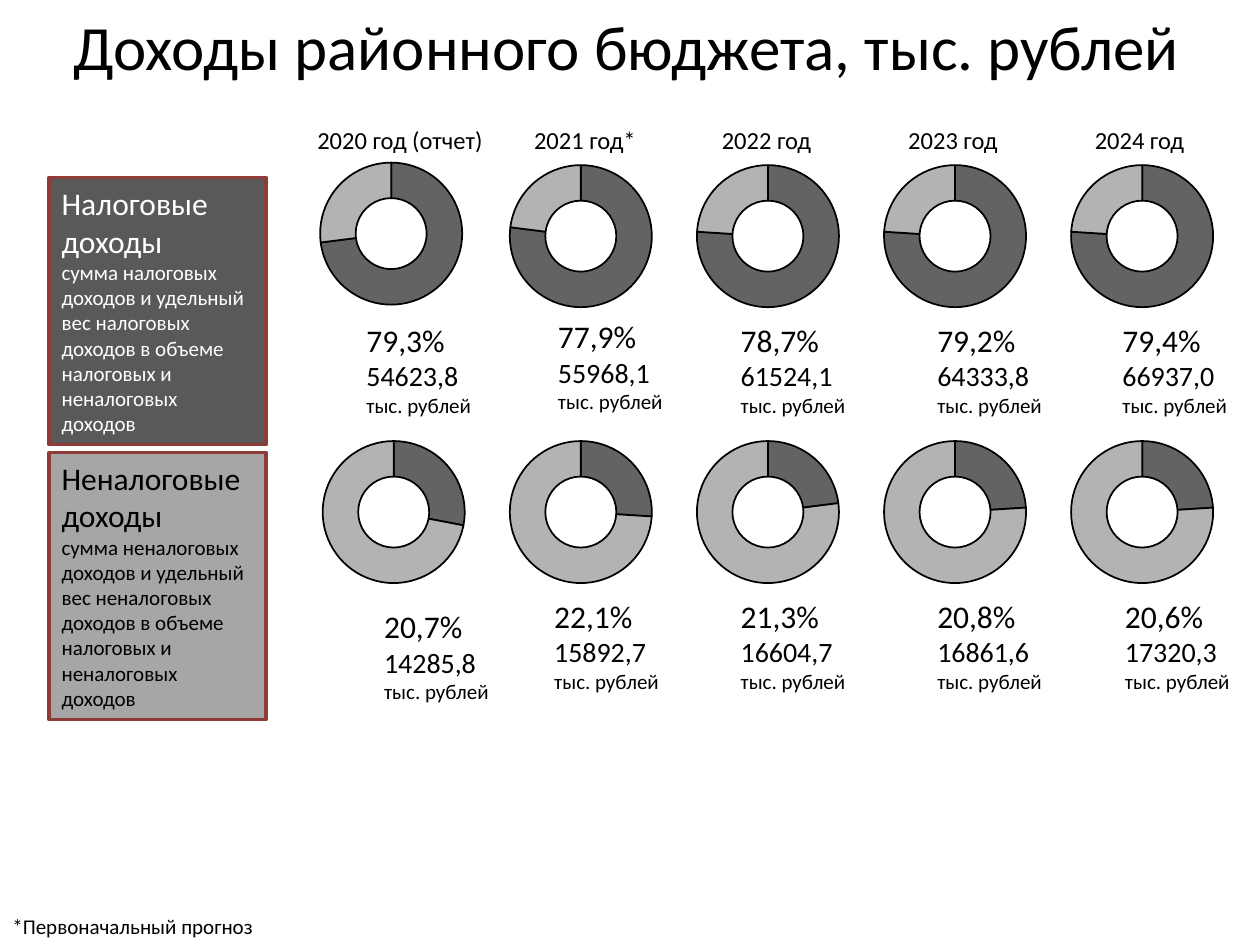
from dataclasses import dataclass

from pptx import Presentation
from pptx.chart.data import CategoryChartData
from pptx.dml.color import RGBColor
from pptx.enum.chart import XL_CHART_TYPE
from pptx.enum.shapes import MSO_SHAPE
from pptx.enum.text import MSO_ANCHOR, MSO_AUTO_SIZE, PP_ALIGN
from pptx.oxml import parse_xml
from pptx.oxml.ns import nsdecls
from pptx.slide import Slide
from pptx.text.text import TextFrame
from pptx.util import Inches, Pt


@dataclass(frozen=True)
class Theme:
    font: str = "Calibri"
    black: RGBColor = RGBColor(0, 0, 0)
    white: RGBColor = RGBColor(255, 255, 255)
    tax_fill: RGBColor = RGBColor(0x59, 0x59, 0x59)
    other_fill: RGBColor = RGBColor(0xA6, 0xA6, 0xA6)
    border: RGBColor = RGBColor(0x8E, 0x3B, 0x39)
    ring: tuple[RGBColor, ...] = (RGBColor(0x63, 0x63, 0x63), RGBColor(0xB3, 0xB3, 0xB3))
    title: int = 36
    heading: int = 18
    amount: int = 16
    year: int = 14
    small: int = 12


@dataclass(frozen=True)
class Year:
    label: str
    left: float
    width: float


@dataclass(frozen=True)
class Share:
    percent: str
    amount: str
    first_slice: int
    text_left: float
    text_top: float
    chart_shift: float = 0


@dataclass(frozen=True)
class IncomeRow:
    heading: str
    description: str
    fill: RGBColor
    color: RGBColor
    box_top: float
    chart_top: float
    shares: tuple[Share, ...]


THEME = Theme()
CHART_SIZE = 1.41
CHART_LEFT = 2.42
COLUMN_STEP = 1.485

YEARS = (
    Year("2020 год (отчет)", 2.42, 1.53),
    Year("2021 год*", 4.14, 1.02),
    Year("2022 год", 5.63, 0.92),
    Year("2023 год", 7.11, 0.92),
    Year("2024 год", 8.59, 0.92),
)

ROWS = (
    IncomeRow(
        "Налоговые доходы",
        "сумма налоговых доходов и удельный вес налоговых доходов "
        "в объеме налоговых и неналоговых доходов",
        THEME.tax_fill, THEME.white, 1.41, 1.17,
        (
            Share("79,3%", "54623,8", 73, 2.81, 2.5, -0.02),
            Share("77,9%", "55968,1", 77, 4.33, 2.47),
            Share("78,7%", "61524,1", 76, 5.78, 2.5),
            Share("79,2%", "64333,8", 76, 7.34, 2.5),
            Share("79,4%", "66937,0", 76, 8.81, 2.5),
        ),
    ),
    IncomeRow(
        "Неналоговые доходы",
        "сумма неналоговых доходов и удельный вес неналоговых доходов "
        "в объеме налоговых и неналоговых доходов",
        THEME.other_fill, THEME.black, 3.59, 3.36,
        (
            Share("20,7%", "14285,8", 28, 2.95, 4.77),
            Share("22,1%", "15892,7", 26, 4.3, 4.69),
            Share("21,3%", "16604,7", 23, 5.78, 4.69),
            Share("20,8%", "16861,6", 24, 7.34, 4.69),
            Share("20,6%", "17320,3", 24, 8.83, 4.69),
        ),
    ),
)


def write_lines(
    text_frame: TextFrame,
    lines: list[tuple[str, int]],
    color: RGBColor = THEME.black,
    alignment: PP_ALIGN = PP_ALIGN.LEFT,
) -> None:
    text_frame.text = "\n".join(text for text, _ in lines)
    for paragraph, (_, size) in zip(text_frame.paragraphs, lines):
        paragraph.alignment = alignment
        font = paragraph.runs[0].font
        font.name = THEME.font
        font.size = Pt(size)
        font.color.rgb = color


def add_text(
    slide: Slide, left: float, top: float, width: float, height: float,
    lines: list[tuple[str, int]], wrap: bool = False,
) -> None:
    text_box = slide.shapes.add_textbox(Inches(left), Inches(top), Inches(width), Inches(height))
    text_box.text_frame.word_wrap = wrap
    text_box.text_frame.auto_size = MSO_AUTO_SIZE.SHAPE_TO_FIT_TEXT
    write_lines(text_box.text_frame, lines)


def add_doughnut(slide: Slide, left: float, top: float, first_slice: int) -> None:
    data = CategoryChartData()
    data.categories = ["1", "2"]
    data.add_series("Series 1", (first_slice, 100 - first_slice))
    chart = slide.shapes.add_chart(
        XL_CHART_TYPE.DOUGHNUT, Inches(left), Inches(top), Inches(CHART_SIZE), Inches(CHART_SIZE), data
    ).chart
    chart.has_legend = False
    chart.has_title = False
    chart.font.name = THEME.font
    chart.font.size = Pt(THEME.heading)
    chart.font.color.rgb = THEME.black
    plot = chart.plots[0]
    plot.vary_by_categories = True
    for index, color in enumerate(THEME.ring):
        point_format = plot.series[0].points[index].format
        point_format.fill.solid()
        point_format.fill.fore_color.rgb = color
        point_format.line.color.rgb = THEME.black
        point_format.line.width = Pt(1)
    plot_area = chart.element.chart.plotArea
    for layout in plot_area.findall("{*}layout"):
        plot_area.remove(layout)
    plot_area.insert(0, parse_xml(
        f'<c:layout {nsdecls("c")}><c:manualLayout><c:layoutTarget val="inner"/>'
        '<c:xMode val="edge"/><c:yMode val="edge"/><c:x val="0.1"/><c:y val="0.1"/>'
        '<c:w val="0.8"/><c:h val="0.8"/></c:manualLayout></c:layout>'
    ))
    for hole_size in chart.element.iterfind(".//{*}holeSize"):
        hole_size.set("val", "50")


def add_income_row(slide: Slide, row: IncomeRow) -> None:
    for column, share in enumerate(row.shares):
        left = CHART_LEFT + column * COLUMN_STEP + share.chart_shift
        add_doughnut(slide, left, row.chart_top + share.chart_shift, share.first_slice)
    box = slide.shapes.add_shape(
        MSO_SHAPE.RECTANGLE, Inches(0.39), Inches(row.box_top), Inches(1.72), Inches(2.12)
    )
    box.shadow.inherit = False
    box.fill.solid()
    box.fill.fore_color.rgb = row.fill
    box.line.color.rgb = THEME.border
    box.line.width = Pt(2)
    box.text_frame.word_wrap = True
    box.text_frame.auto_size = MSO_AUTO_SIZE.SHAPE_TO_FIT_TEXT
    box.text_frame.vertical_anchor = MSO_ANCHOR.TOP
    write_lines(
        box.text_frame, [(row.heading, THEME.heading), (row.description, THEME.small)], row.color
    )
    for share in row.shares:
        add_text(slide, share.text_left, share.text_top, 1.05, 0.88, [
            (share.percent, THEME.heading),
            (share.amount, THEME.amount),
            ("тыс. рублей", THEME.small),
        ])


def main() -> None:
    presentation = Presentation()
    presentation.slide_width = Inches(10)
    presentation.slide_height = Inches(7.5)
    slide = presentation.slides.add_slide(presentation.slide_layouts[5])
    title = slide.shapes.title
    title.left, title.top, title.width, title.height = (
        Inches(0.47), Inches(0), Inches(9), Inches(0.72)
    )
    title.text_frame.vertical_anchor = MSO_ANCHOR.MIDDLE
    write_lines(
        title.text_frame, [("Доходы районного бюджета, тыс. рублей", THEME.title)],
        alignment=PP_ALIGN.CENTER,
    )
    for row in ROWS:
        add_income_row(slide, row)
    for year in YEARS:
        add_text(slide, year.left, 0.94, year.width, 0.34, [(year.label, THEME.year)])
    add_text(slide, 0, 7.2, 2.73, 0.3, [("*Первоначальный прогноз", THEME.small)], wrap=True)
    presentation.save("out.pptx")


if __name__ == "__main__":
    main()
